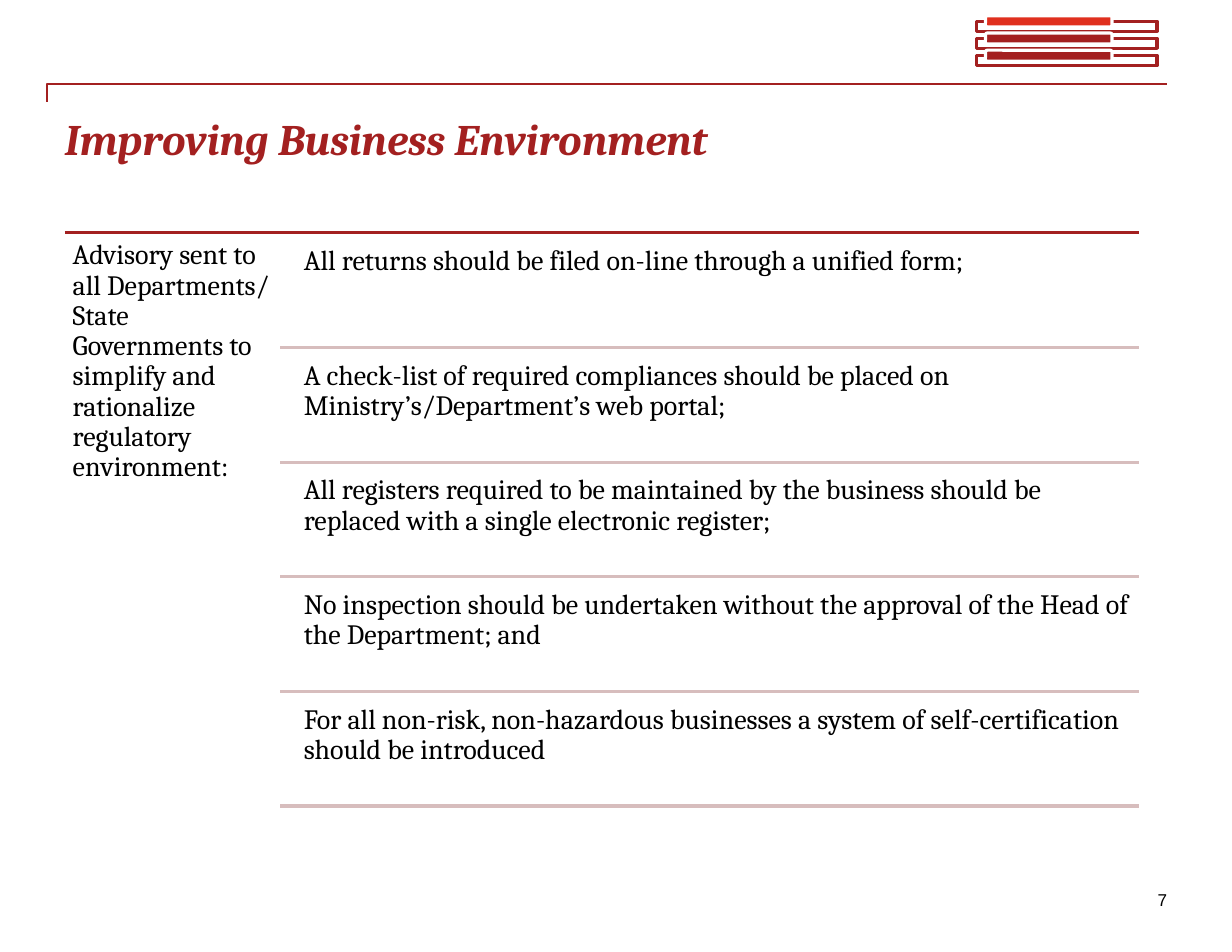
from lxml import etree
from pptx import Presentation
from pptx.dml.color import RGBColor
from pptx.enum.shapes import MSO_CONNECTOR, MSO_SHAPE
from pptx.enum.text import MSO_ANCHOR, MSO_AUTO_SIZE, PP_ALIGN
from pptx.oxml.ns import qn
from pptx.util import Cm, Pt

STRAIGHT, ELBOW = MSO_CONNECTOR.STRAIGHT, MSO_CONNECTOR.ELBOW
RECTANGLE, ROUNDED = MSO_SHAPE.RECTANGLE, MSO_SHAPE.ROUNDED_RECTANGLE
TOP = MSO_ANCHOR.TOP
LEFT, RIGHT, JUSTIFY = PP_ALIGN.LEFT, PP_ALIGN.RIGHT, PP_ALIGN.JUSTIFY
NO_AUTOSIZE = MSO_AUTO_SIZE.NONE

DARK_RED = RGBColor(0xA3, 0x20, 0x20)
BRIGHT_RED = RGBColor(0xE0, 0x30, 0x1E)
PALE_RED = RGBColor(0xD7, 0xBD, 0xBD)
BLACK = RGBColor(0, 0, 0)
WHITE = RGBColor(0xFF, 0xFF, 0xFF)

TITLE = "Improving Business Environment"
ADVISORY = ("Advisory sent to all Departments/ State Governments to simplify "
            "and rationalize regulatory environment:")
MEASURES = [
    "All returns should be filed on-line through a unified form;",
    "A check-list of required compliances should be placed on "
    "Ministry’s/Department’s web portal;",
    "All registers required to be maintained by the business should be "
    "replaced with a single electronic register;",
    "No inspection should be undertaken without the approval of the Head of "
    "the Department; and",
    "For all non-risk, non-hazardous businesses a system of "
    "self-certification should be introduced",
]

# Lengths in centimetres
LIST_LEFT, LIST_RIGHT, LIST_TOP = 1.47, 25.83, 5.28
MEASURE_LEFT, MEASURE_INDENT = 6.35, 0.36
ROW_PITCH, ROW_GAP, ROW_HEIGHT = 2.6, 0.13, 2.47
BAR_TOP, BAR_PITCH = 0.36, 0.39


class SlideBuilder:
    """Holds the text style and the slide being drawn; lengths are in cm."""

    font = "Cambria"
    size = 18
    inset = 0.18

    def __init__(self, slide):
        self.slide = slide

    def fill_frame(self, frame, text, inset, alignment=LEFT, font=None,
                   size=None, color=BLACK, emphasis=False):
        frame.margin_left = frame.margin_right = Cm(inset)
        frame.margin_top = frame.margin_bottom = Cm(inset)
        frame.vertical_anchor = TOP
        frame.auto_size = NO_AUTOSIZE
        paragraph = frame.paragraphs[0]
        paragraph.alignment = alignment
        run = paragraph.add_run()
        run.text = text
        run.font.name = font or self.font
        run.font.size = Pt(size or self.size)
        run.font.color.rgb = color
        run.font.bold = run.font.italic = emphasis
        return paragraph

    def title(self, text, left, top, width, height):
        shape = self.slide.shapes.title
        shape.left, shape.top = Cm(left), Cm(top)
        shape.width, shape.height = Cm(width), Cm(height)
        self.fill_frame(shape.text_frame, text, 0, JUSTIFY, size=28,
                        color=DARK_RED, emphasis=True)

    def text_box(self, text, left, top, width, height):
        box = self.slide.shapes.add_textbox(Cm(left), Cm(top), Cm(width), Cm(height))
        box.text_frame.word_wrap = True
        paragraph = self.fill_frame(box.text_frame, text, self.inset)
        paragraph.line_spacing = 0.9

    def page_number(self, text, left, top, width, height):
        box = self.slide.shapes.add_textbox(Cm(left), Cm(top), Cm(width), Cm(height))
        box.text_frame.word_wrap = False
        self.fill_frame(box.text_frame, text, 0, RIGHT, font="Arial", size=11)

    def line(self, left, top, right, bottom, color, width, kind=STRAIGHT):
        connector = self.slide.shapes.add_connector(
            kind, Cm(left), Cm(top), Cm(right), Cm(bottom))
        connector.line.color.rgb = color
        connector.line.width = Pt(width)
        properties = connector._element.spPr
        etree.SubElement(properties, qn("a:effectLst"))
        return properties

    def corner_line(self, left, top, right, bottom, color, width):
        """Draw an elbow that turns at its starting edge."""
        properties = self.line(left, top, right, bottom, color, width, ELBOW)
        geometry = properties.find(qn("a:prstGeom"))
        adjustments = geometry.find(qn("a:avLst"))
        if adjustments is None:
            adjustments = etree.SubElement(geometry, qn("a:avLst"))
        etree.SubElement(adjustments, qn("a:gd"), name="adj1", fmla="val 0")

    def bar(self, kind, left, top, width, height, fill, outline, opacity=100):
        shape = self.slide.shapes.add_shape(kind, Cm(left), Cm(top), Cm(width), Cm(height))
        shape.shadow.inherit = False
        shape.fill.solid()
        shape.fill.fore_color.rgb = fill
        shape.line.color.rgb = outline
        shape.line.width = Pt(2)
        if opacity < 100:
            color = shape._element.spPr.find(qn("a:solidFill"))[0]
            etree.SubElement(color, qn("a:alpha"), val=str(opacity * 1000))


def main():
    presentation = Presentation()
    presentation.slide_width, presentation.slide_height = Cm(27.94), Cm(21.59)
    slide = presentation.slides.add_slide(presentation.slide_layouts[5])
    builder = SlideBuilder(slide)

    builder.corner_line(1.07, 2.31, 26.47, 1.91, DARK_RED, 1)
    builder.title(TITLE, LIST_LEFT, 2.54, 25, 1.9)

    builder.line(LIST_LEFT, LIST_TOP, LIST_RIGHT, LIST_TOP, DARK_RED, 2)
    builder.text_box(ADVISORY, LIST_LEFT, LIST_TOP, MEASURE_LEFT - LIST_LEFT, 13.13)
    text_left = MEASURE_LEFT + MEASURE_INDENT
    for row, measure in enumerate(MEASURES):
        top = LIST_TOP + row * ROW_PITCH
        bottom = top + ROW_PITCH
        builder.text_box(measure, text_left, top + ROW_GAP,
                         LIST_RIGHT - text_left, ROW_HEIGHT)
        builder.line(MEASURE_LEFT, bottom, LIST_RIGHT, bottom, PALE_RED, 2)

    builder.page_number("7", 26.24, 20.17, 0.23, 0.48)

    for row, color in enumerate([BRIGHT_RED, DARK_RED, DARK_RED]):
        top = BAR_TOP + row * BAR_PITCH
        builder.bar(RECTANGLE, 22.15, top + 0.12, 4.09, 0.23, WHITE, DARK_RED, opacity=90)
        builder.bar(ROUNDED, 22.35, top, 2.87, 0.25, color, WHITE)

    presentation.save("out.pptx")


if __name__ == "__main__":
    main()
